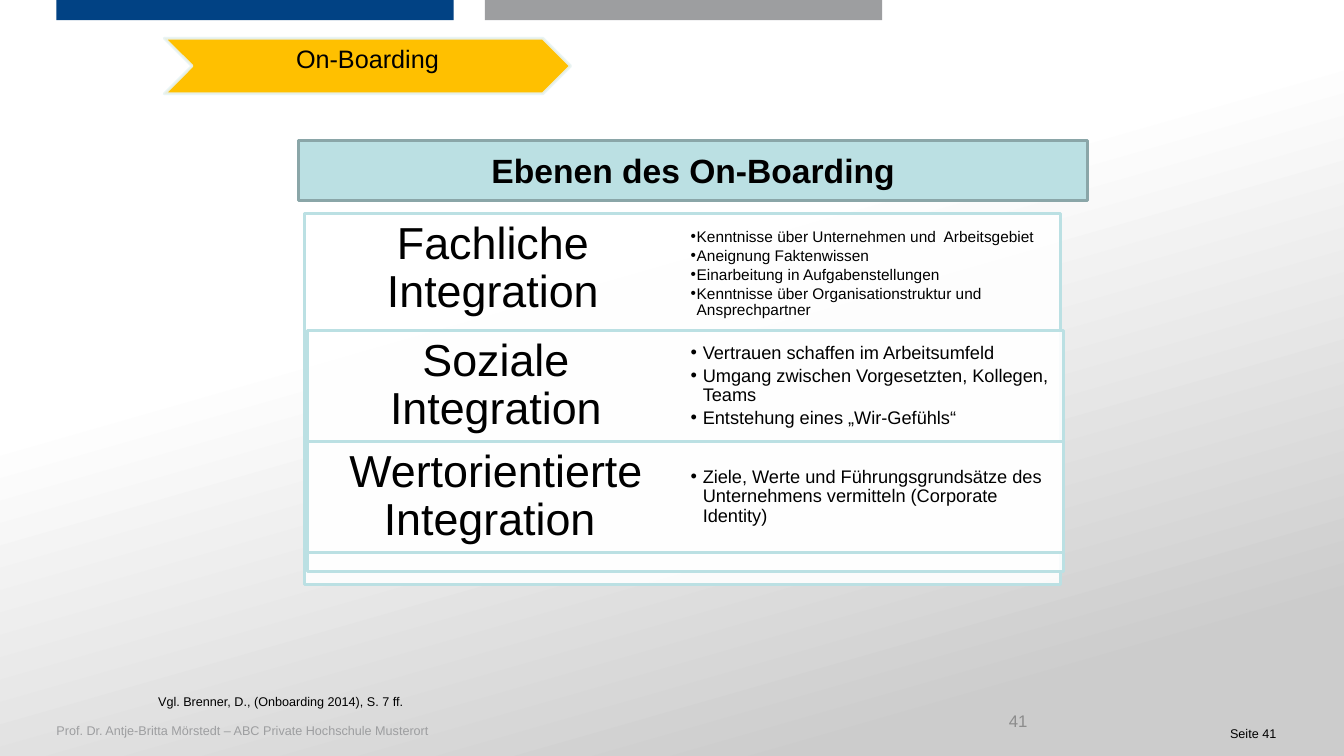
from lxml import etree
from pptx import Presentation
from pptx.dml.color import RGBColor
from pptx.enum.shapes import MSO_SHAPE
from pptx.enum.text import MSO_ANCHOR, MSO_AUTO_SIZE, PP_ALIGN
from pptx.oxml.ns import qn
from pptx.util import Emu, Pt

PX = 9144  # 100 px per inch
RECT, CHEVRON = MSO_SHAPE.RECTANGLE, MSO_SHAPE.CHEVRON
TOP, MIDDLE = MSO_ANCHOR.TOP, MSO_ANCHOR.MIDDLE
LEFT, CENTER, RIGHT = PP_ALIGN.LEFT, PP_ALIGN.CENTER, PP_ALIGN.RIGHT
NO_AUTOFIT = MSO_AUTO_SIZE.NONE
FONT = "Arial"
COMPARISON_LAYOUT = 4

COLORS = {
    "white": "FFFFFF", "shade": "CCCCCC", "black": "000000",
    "blue": "014284", "gray": "9D9EA0", "number": "8C8C8C",
    "teal": "BBE0E3", "teal_dark": "8AA6A8",
    "amber": "FFC000", "ice": "E7F3F4",
}

# Heading, frame left / top / height, list top, text size, bullet indent, bullets
LEVELS = [
    ("Fachliche Integration", 302, 212, 368, 217, 11, 6, [
        "Kenntnisse über Unternehmen und  Arbeitsgebiet",
        "Aneignung Faktenwissen",
        "Einarbeitung in Aufgabenstellungen",
        "Kenntnisse über Organisationstruktur und Ansprechpartner"]),
    ("Soziale Integration", 305, 328, 239, 328, 13, 12, [
        "Vertrauen schaffen im Arbeitsumfeld",
        "Umgang zwischen Vorgesetzten, Kollegen, Teams",
        "Entstehung eines „Wir-Gefühls“"]),
    ("Wertorientierte Integration ", 305, 438, 110, 438, 13, 12, [
        "Ziele, Werte und Führungsgrundsätze des Unternehmens vermitteln "
        "(Corporate Identity)"]),
]
FRAME_WIDTH, HEADING_HEIGHT, PADDING = 750, 97, 13


def px(length):
    return Emu(length * PX)


def rgb(name):
    return RGBColor.from_string(COLORS[name])


def set_alpha(parent, percent):
    for color in parent.iter(qn("a:srgbClr")):
        etree.SubElement(color, qn("a:alpha")).set("val", str(percent * 1000))


def place(shape, left, top, width, height):
    shape.left, shape.top = px(left), px(top)
    shape.width, shape.height = px(width), px(height)


def paint(shape, fill, line=None):
    shape.fill.solid()
    shape.fill.fore_color.rgb = rgb(fill)
    if line:
        shape.line.color.rgb = rgb(line)
        shape.line.width = Pt(2)
    else:
        shape.line.fill.background()


def add_bullet(paragraph, indent):
    props = paragraph._p.get_or_add_pPr()
    props.set("marL", str(px(indent)))
    props.set("indent", str(-px(indent)))
    etree.SubElement(props, qn("a:buFont")).set("typeface", FONT)
    etree.SubElement(props, qn("a:buChar")).set("char", "•")


def write(shape, lines, size, color="black", bold=False, align=LEFT, anchor=TOP,
          insets=(10, 5, 10, 5), wrap=True, spacing=1.0, after=0, bullet=None):
    frame = shape.text_frame
    frame.auto_size = NO_AUTOFIT
    frame.word_wrap = wrap
    frame.vertical_anchor = anchor
    (frame.margin_left, frame.margin_top,
     frame.margin_right, frame.margin_bottom) = map(px, insets)
    frame.text = "\n".join(lines)
    for paragraph in frame.paragraphs:
        paragraph.alignment = align
        paragraph.line_spacing = spacing
        paragraph.space_before, paragraph.space_after = Pt(0), Pt(after)
        if bullet:
            add_bullet(paragraph, bullet)
        for run in paragraph.runs:
            font = run.font
            font.name, font.size, font.bold = FONT, Pt(size), bold
            font.color.rgb = rgb(color)


def add_block(slide, kind, box, fill, line=None):
    block = slide.shapes.add_shape(kind, *map(px, box))
    block.shadow.inherit = False
    paint(block, fill, line)
    return block


def add_label(slide, box, text, size, **style):
    label = slide.shapes.add_textbox(*map(px, box))
    write(label, [text], size, **style)


def add_level(slide, bullets_holder, level):
    heading, left, top, height, list_top, size, indent, bullets = level
    frame = add_block(slide, RECT, (left, top, FRAME_WIDTH, height), "white", "teal")
    set_alpha(frame._element.spPr.find(qn("a:solidFill")), 90)
    write(frame, [heading], 32, align=CENTER, anchor=MIDDLE, spacing=0.9, after=11,
          insets=(PADDING, PADDING, 389, height - HEADING_HEIGHT))
    place(bullets_holder, 680, list_top, 375, 110)
    write(bullets_holder, bullets, size, anchor=MIDDLE, insets=(5, 5, 5, 5),
          spacing=0.9, after=size * 0.15, bullet=indent)


def paint_background(slide):
    fill = slide.background.fill
    fill.gradient()
    fill.gradient_angle = 286
    for stop, position, color in zip(fill.gradient_stops, (0.38, 0.87),
                                     ("white", "shade")):
        stop.position = position
        stop.color.rgb = rgb(color)


def main():
    deck = Presentation()
    deck.slide_width, deck.slide_height = px(1333), px(750)
    slide = deck.slides.add_slide(deck.slide_layouts[COMPARISON_LAYOUT])
    title, *holders, spare = slide.placeholders
    spare._element.getparent().remove(spare._element)

    # Background, header bars and footer
    paint_background(slide)
    add_block(slide, RECT, (481, 0, 394, 20), "gray")
    add_block(slide, RECT, (56, 0, 394, 20), "blue")
    add_label(slide, (56, 717, 1056, 15),
              "Prof. Dr. Antje-Britta Mörstedt – ABC Private Hochschule Musterort",
              9, color="gray", insets=(0, 0, 0, 0))
    add_label(slide, (1209, 714, 81, 27), "Seite 41", 9,
              insets=(11, 6, 11, 6), wrap=False)
    add_label(slide, (776, 695, 253, 40), "41", 12, color="number",
              align=RIGHT, anchor=MIDDLE)

    # Integration levels: all frames lie beneath the bullet lists
    for holder, level in zip(holders, LEVELS):
        add_level(slide, holder, level)
    for holder in holders:
        slide.shapes._spTree.append(holder._element)

    # Citation, title and chapter marker
    add_label(slide, (147, 683, 284, 25),
              "Vgl. Brenner, D., (Onboarding 2014), S. 7 ff.", 9)
    place(title, 296, 139, 783, 60)
    paint(title, "teal", "teal_dark")
    write(title, ["Ebenen des On-Boarding"], 24, bold=True, align=CENTER, anchor=MIDDLE)
    chapter = add_block(slide, CHEVRON, (163, 38, 403, 55), "amber", "ice")
    set_alpha(chapter._element.spPr.find(qn("a:ln")), 90)
    write(chapter, ["On-Boarding"], 18, align=CENTER)

    deck.save("out.pptx")


if __name__ == "__main__":
    main()
